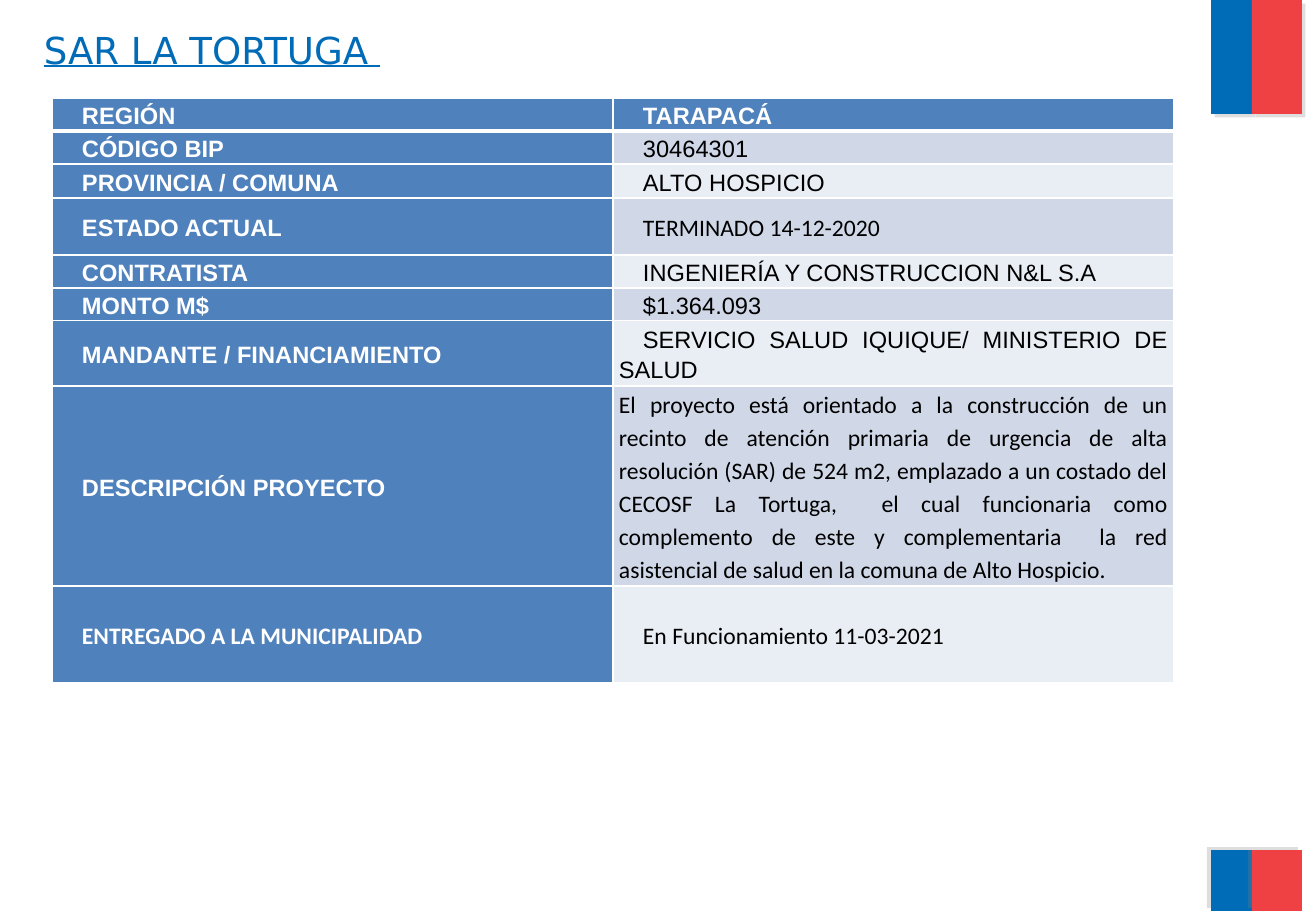
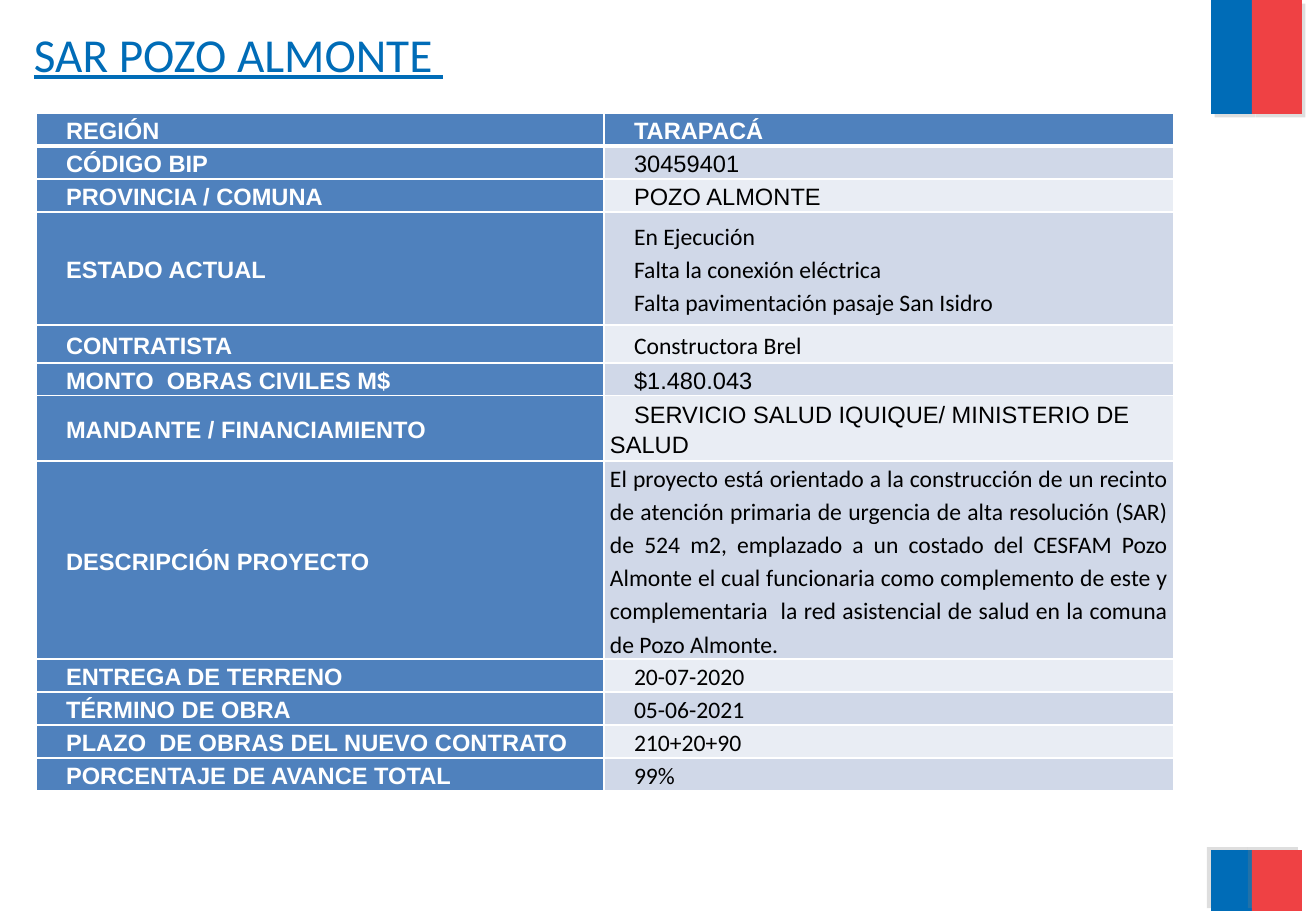
from lxml.etree import SubElement
from pptx import Presentation
from pptx.dml.color import RGBColor
from pptx.enum.shapes import MSO_SHAPE
from pptx.enum.text import MSO_ANCHOR, PP_ALIGN
from pptx.oxml.ns import qn
from pptx.util import Emu, Pt

SCALE = 914400 / 121.5
HUES = {
    "blue": "006CB7", "red": "EF4144", "head": "4F81BD", "dark": "D0D8E8",
    "light": "E9EDF4", "white": "FFFFFF", "black": "000000", "shade": "808080",
}
BANDS = [
    (1211, -1, 41, 115, "blue", 45), (1252, 0, 50, 114, "red", 45),
    (1211, 850, 41, 61, "blue", 215), (1252, 850, 50, 61, "red", 215),
]
LABEL = {"size": Pt(14), "bold": True, "name": "Arial"}
VALUE = {"size": Pt(14), "bold": False, "name": "Arial"}
INSET = {"margin_left": 6, "margin_right": 6, "margin_top": 0, "margin_bottom": 0}
ABOUT = "DESCRIPCIÓN PROYECTO"
FUND = "SERVICIO SALUD IQUIQUE/ MINISTERIO DE SALUD"


def px(count):
    return Emu(round(count * SCALE))


def tint(hue):
    return RGBColor.from_string(HUES[hue])


class Deck:
    def __init__(self):
        self.show = Presentation()
        self.show.slide_width, self.show.slide_height = px(1316), px(911)
        self.slide = None

    def page(self):
        self.slide = self.show.slides.add_slide(self.show.slide_layouts[6])
        for band in BANDS:
            self.band(*band)

    def band(self, left, top, width, height, hue, angle):
        shape = self.slide.shapes.add_shape(
            MSO_SHAPE.RECTANGLE, px(left), px(top), px(width), px(height))
        shape.fill.solid()
        shape.fill.fore_color.rgb = tint(hue)
        shape.line.fill.background()
        shape.shadow.inherit = False
        effect = shape._element.spPr.find(qn("a:effectLst"))
        shade = SubElement(effect, qn("a:outerShdw"), blurRad="0", dist=str(Pt(3)),
                           dir=str(angle * 60000), algn="ctr", rotWithShape="0")
        tone = SubElement(shade, qn("a:srgbClr"), val=HUES["shade"])
        SubElement(tone, qn("a:alpha"), val="25000")

    def words(self, line, text, hue, style):
        run = line.add_run()
        run.text = text
        run.font.color.rgb = tint(hue)
        for key, item in style.items():
            setattr(run.font, key, item)

    def title(self, left, top, text, face, size):
        frame = self.slide.shapes.add_textbox(
            px(left), px(top), px(1047), px(79)).text_frame
        frame.word_wrap = True
        self.words(frame.paragraphs[0], text, "blue",
                   {"name": face, "size": Pt(size), "underline": True})

    def edge(self, cell, low):
        props = cell._tc.get_or_add_tcPr()
        for side, width in (("L", 1), ("R", 1), ("T", 1), ("B", low)):
            line = SubElement(props, qn("a:ln" + side), w=str(Pt(width)))
            fill = SubElement(line, qn("a:solidFill"))
            SubElement(fill, qn("a:srgbClr"), val=HUES["white"])

    def cell(self, cell, text, fill, hue, style, align, dent=24, low=1):
        for key, item in INSET.items():
            setattr(cell, key, px(item))
        cell.vertical_anchor = MSO_ANCHOR.MIDDLE
        self.edge(cell, low)
        cell.fill.solid()
        cell.fill.fore_color.rgb = tint(fill)
        frame = cell.text_frame
        for place, part in enumerate(text.split("\n")):
            line = frame.add_paragraph() if place else frame.paragraphs[0]
            line.alignment, line.line_spacing = align, 1.15
            props = line._p.get_or_add_pPr()
            props.set("marL", "0")
            props.set("indent", str(px(dent)))
            self.words(line, part, hue, style)

    def table(self, left, top, widths, rows, align):
        tall = sum(row[0] for row in rows)
        grid = self.slide.shapes.add_table(
            len(rows), 2, px(left), px(top), px(sum(widths)), px(tall)).table
        for column, width in zip(grid.columns, widths):
            column.width = px(width)
        for place, (height, label, value, face, *other) in enumerate(rows):
            grid.rows[place].height = px(height)
            low = 1 if place else 3
            name = other[0] if other else "Arial"
            self.cell(grid.cell(place, 0), label, "head", "white",
                      {**LABEL, "name": name}, PP_ALIGN.LEFT, low=low)
            spot = grid.cell(place, 1)
            if not place:
                self.cell(spot, value, "head", "white", LABEL, PP_ALIGN.LEFT, low=low)
                continue
            prose = label == ABOUT
            self.cell(spot, value, "dark" if place % 2 else "light", "black",
                      {**VALUE, "name": face},
                      PP_ALIGN.JUSTIFY if prose else align, 0 if prose else 24)


def main():
    deck = Deck()
    deck.page()
    deck.title(32, 21, "SAR LA TORTUGA ", "DejaVu Sans", 22)
    deck.table(52, 98, (561, 561), [
        (33, "REGIÓN", "TARAPACÁ", "Arial"),
        (33, "CÓDIGO BIP", "30464301", "Arial"),
        (34, "PROVINCIA / COMUNA", "ALTO HOSPICIO", "Arial"),
        (57, "ESTADO ACTUAL", "TERMINADO 14-12-2020", "Calibri"),
        (33, "CONTRATISTA", "INGENIERÍA Y CONSTRUCCION N&L S.A", "Arial"),
        (33, "MONTO M$", "$1.364.093", "Arial"),
        (33, "MANDANTE / FINANCIAMIENTO", FUND, "Arial"),
        (200, ABOUT, "El proyecto está orientado a la construcción de un recinto de "
         "atención primaria de urgencia de alta resolución (SAR) de 524 m2, emplazado "
         "a un costado del CECOSF La Tortuga,  el cual funcionaria como complemento de "
         "este y complementaria  la red asistencial de salud en la comuna de Alto "
         "Hospicio.", "Calibri"),
        (97, "ENTREGADO A LA MUNICIPALIDAD", "En Funcionamiento 11-03-2021",
         "Calibri", "Calibri"),
    ], PP_ALIGN.JUSTIFY)

    deck.page()
    deck.title(22, 19, "SAR POZO ALMONTE ", "Calibri", 28)
    deck.table(36, 113, (568, 570), [
        (33, "REGIÓN", "TARAPACÁ", "Arial"),
        (33, "CÓDIGO BIP", "30459401", "Arial"),
        (33, "PROVINCIA / COMUNA", "POZO ALMONTE", "Arial"),
        (113, "ESTADO ACTUAL", "En Ejecución\nFalta la conexión eléctrica\n"
         "Falta pavimentación pasaje San Isidro", "Calibri"),
        (38, "CONTRATISTA", "Constructora Brel", "Calibri"),
        (33, "MONTO  OBRAS CIVILES M$", "$1.480.043", "Arial"),
        (41, "MANDANTE / FINANCIAMIENTO", FUND, "Arial"),
        (198, ABOUT, "El proyecto está orientado a la construcción de un recinto de "
         "atención primaria de urgencia de alta resolución (SAR) de 524 m2, emplazado "
         "a un costado del CESFAM Pozo Almonte el cual funcionaria como complemento de "
         "este y complementaria  la red asistencial de salud en la comuna de Pozo "
         "Almonte.", "Calibri"),
        (33, "ENTREGA DE TERRENO", "20-07-2020", "Calibri"),
        (33, "TÉRMINO DE OBRA", "05-06-2021", "Calibri"),
        (33, "PLAZO  DE OBRAS DEL NUEVO CONTRATO", "210+20+90", "Calibri"),
        (33, "PORCENTAJE DE AVANCE TOTAL", "99%", "Calibri"),
    ], PP_ALIGN.LEFT)
    deck.show.save("out.pptx")


if __name__ == "__main__":
    main()
